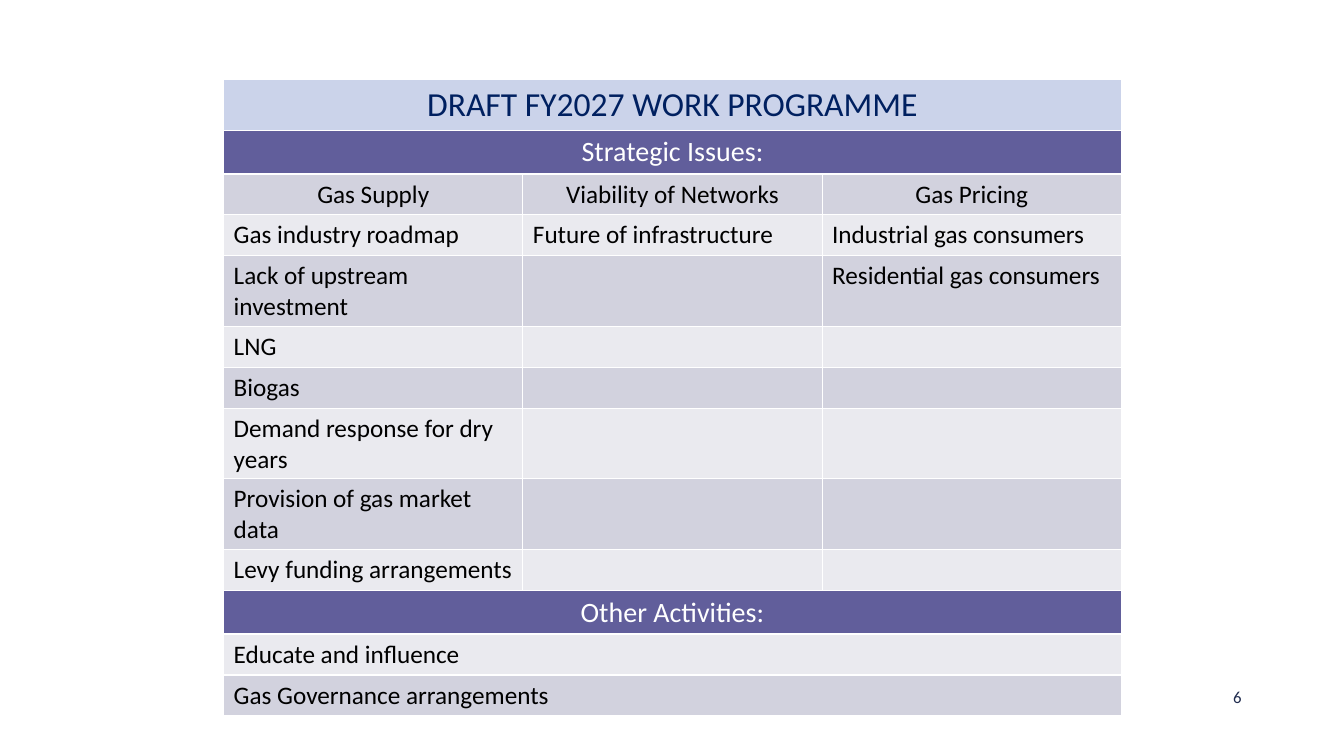
import dataclasses

import lxml.etree
import pptx
import pptx.dml.color
import pptx.enum.text
import pptx.oxml.ns
import pptx.table
import pptx.text.text
import pptx.util

PX = 9525
FONT = "Calibri"
ALIGN = pptx.enum.text.PP_ALIGN
MIDDLE = pptx.enum.text.MSO_ANCHOR.MIDDLE
BANDS = ("D2D2DE", "EAEAEF")
COLS = 3
COL_WIDTH = 285
ROW_HEIGHT = 39


@dataclasses.dataclass(frozen=True)
class Row:
    texts: tuple[str, ...]
    wide: bool = False
    size: int = 18
    ink: str = "000000"
    fill: str | None = None
    align: ALIGN = ALIGN.LEFT


def heading(text: str) -> Row:
    return Row((text,), wide=True, size=20, ink="FFFFFF", fill="615E9B",
               align=ALIGN.CENTER)


ROWS = (
    Row(("DRAFT FY2027 WORK PROGRAMME",), wide=True, size=24, ink="002060",
        fill="CBD3EA", align=ALIGN.CENTER),
    heading("Strategic Issues:"),
    Row(("Gas Supply", "Viability of Networks", "Gas Pricing"),
        align=ALIGN.CENTER),
    Row(("Gas industry roadmap", "Future of infrastructure",
         "Industrial gas consumers")),
    Row(("Lack of upstream investment", "", "Residential gas consumers")),
    Row(("LNG",)),
    Row(("Biogas",)),
    Row(("Demand response for dry years",)),
    Row(("Provision of gas market data",)),
    Row(("Levy funding arrangements",)),
    heading("Other Activities:"),
    Row(("Educate and influence",), wide=True),
    Row(("Gas Governance arrangements",), wide=True),
)


def px(count: int) -> pptx.util.Emu:
    return pptx.util.Emu(count * PX)


def color(code: str) -> pptx.dml.color.RGBColor:
    return pptx.dml.color.RGBColor.from_string(code)


def write(frame: pptx.text.text.TextFrame, text: str, *, size: int = 18,
          ink: str = "000000", align: ALIGN = ALIGN.LEFT) -> None:
    para = frame.paragraphs[0]
    para.alignment = align
    run = para.add_run()
    run.text = text
    run.font.name = FONT
    run.font.size = pptx.util.Pt(size)
    run.font.color.rgb = color(ink)


def edge(cell: pptx.table._Cell, code: str = "FFFFFF") -> None:
    """Give all four sides of a cell a one-point line."""
    props = cell._tc.get_or_add_tcPr()
    name = pptx.oxml.ns.qn
    for side in ("a:lnL", "a:lnR", "a:lnT", "a:lnB"):
        line = lxml.etree.SubElement(props, name(side), w="12700")
        fill = lxml.etree.SubElement(line, name("a:solidFill"))
        lxml.etree.SubElement(fill, name("a:srgbClr"), val=code)


def draw_row(table: pptx.table.Table, index: int, row: Row) -> None:
    table.rows[index].height = px(ROW_HEIGHT)
    cells = [table.cell(index, col) for col in range(COLS)]
    for cell in cells:
        edge(cell)
        cell.fill.solid()
        cell.fill.fore_color.rgb = color(row.fill or BANDS[index % 2])
    if row.wide:
        cells[0].merge(cells[-1])
    for cell, text in zip(cells, row.texts):
        if text:
            write(cell.text_frame, text, size=row.size, ink=row.ink,
                  align=row.align)


def main() -> None:
    deck = pptx.Presentation()
    deck.slide_width, deck.slide_height = px(1280), px(720)
    slide = deck.slides.add_slide(deck.slide_layouts[6])

    number = slide.shapes.add_textbox(px(904), px(645), px(288), px(38))
    number.text_frame.word_wrap = True
    number.text_frame.vertical_anchor = MIDDLE
    write(number.text_frame, "6", size=12, ink="1F2B4E", align=ALIGN.RIGHT)

    table = slide.shapes.add_table(
        len(ROWS), COLS, px(213), px(76), px(COLS * COL_WIDTH),
        px(len(ROWS) * ROW_HEIGHT)).table
    table.first_row = False
    table.horz_banding = False
    for col in table.columns:
        col.width = px(COL_WIDTH)
    for index, row in enumerate(ROWS):
        draw_row(table, index, row)

    deck.save("out.pptx")


if __name__ == "__main__":
    main()
